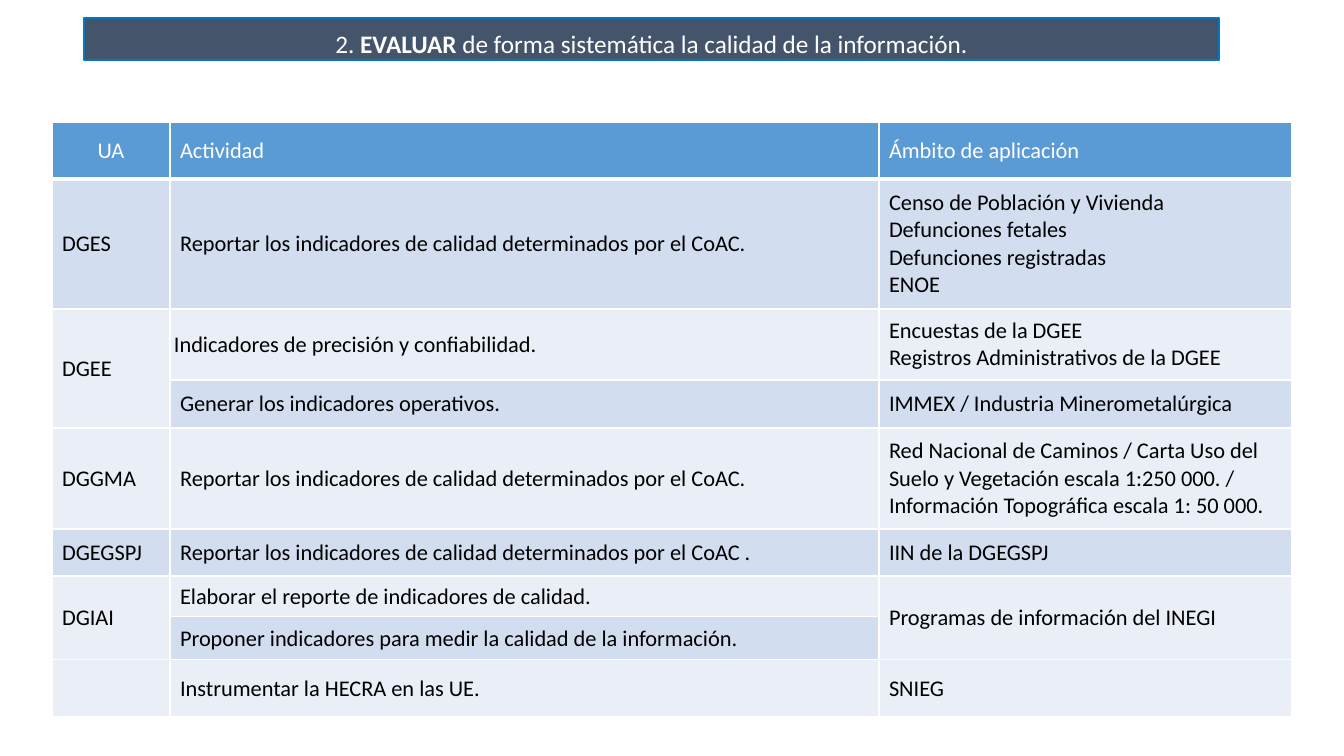
from dataclasses import dataclass

from lxml.etree import SubElement
from pptx import Presentation
from pptx.dml.color import RGBColor
from pptx.enum.text import MSO_ANCHOR, MSO_AUTO_SIZE, PP_ALIGN
from pptx.oxml.ns import qn
from pptx.util import Pt

EMU_PER_INCH = 914400
PX_PER_INCH = 100.8


@dataclass(frozen=True)
class Theme:
    font: str = "Calibri"
    title_size: int = 18
    table_size: int = 16
    banner: str = "44546A"
    banner_line: str = "0079BF"
    header: str = "5B9BD5"
    bands: tuple = ("EAEFF7", "D2DEEF")
    light: str = "FFFFFF"
    dark: str = "000000"


THEME = Theme()

TITLE_RUNS = (
    ("2. ", False),
    ("EVALUAR", True),
    (" de forma sistemática la calidad de la información.", False),
)
COLUMN_WIDTHS = (118, 709, 413)
# Row height, then the cells; None continues the cell above.
ROWS = (
    (57, "UA", "Actividad", "Ámbito de aplicación"),
    (130, "DGES", "Reportar los indicadores de calidad determinados por el CoAC.",
     "Censo de Población y Vivienda\nDefunciones fetales\nDefunciones registradas\nENOE"),
    (71, "DGEE", "Indicadores de precisión y confiabilidad.",
     "Encuestas de la DGEE\nRegistros Administrativos de la DGEE"),
    (48, None, "Generar los indicadores operativos.", "IMMEX / Industria Minerometalúrgica"),
    (101, "DGGMA", "Reportar los indicadores de calidad determinados por el CoAC.",
     "Red Nacional de Caminos / Carta Uso del Suelo y Vegetación escala 1:250 000. / "
     "Información Topográfica escala 1: 50 000."),
    (47, "DGEGSPJ", "Reportar los indicadores de calidad determinados por el CoAC .",
     "IIN de la DGEGSPJ"),
    (41, "DGIAI", "Elaborar el reporte de indicadores de calidad.",
     "Programas de información del INEGI"),
    (43, None, "Proponer indicadores para medir la calidad de la información.", None),
    (57, "", "Instrumentar la HECRA en las UE.", "SNIEG"),
)
PRECISION_CELL = (2, 1)


def px(length):
    return round(length * EMU_PER_INCH / PX_PER_INCH)


def rgb(value):
    return RGBColor.from_string(value)


def style_font(font, size, color, bold=False):
    font.name = THEME.font
    font.size = Pt(size)
    font.bold = bold
    font.color.rgb = rgb(color)


def add_banner(slide, left, top, width, height):
    title = slide.shapes.title
    title.left, title.top, title.width, title.height = map(px, (left, top, width, height))
    title.fill.solid()
    title.fill.fore_color.rgb = rgb(THEME.banner)
    title.line.color.rgb = rgb(THEME.banner_line)
    title.line.width = Pt(1)
    frame = title.text_frame
    frame.word_wrap = True
    frame.auto_size = MSO_AUTO_SIZE.NONE
    frame.vertical_anchor = MSO_ANCHOR.MIDDLE
    frame.margin_top, frame.margin_bottom = px(8), px(2)
    paragraph = frame.paragraphs[0]
    paragraph.alignment = PP_ALIGN.CENTER
    paragraph.line_spacing = 1.07
    for text, bold in TITLE_RUNS:
        run = paragraph.add_run()
        run.text = text
        style_font(run.font, THEME.title_size, THEME.light, bold)


def set_borders(cell, bottom_points):
    properties = cell._tc.get_or_add_tcPr()
    for side, points in (("L", 1), ("R", 1), ("T", 1), ("B", bottom_points)):
        line = SubElement(properties, qn(f"a:ln{side}"), w=str(Pt(points)))
        fill = SubElement(line, qn("a:solidFill"))
        SubElement(fill, qn("a:srgbClr"), val=THEME.light)


def fill_cell(cell, text, is_header, background):
    set_borders(cell, 3 if is_header else 1)
    cell.fill.solid()
    cell.fill.fore_color.rgb = rgb(background)
    cell.vertical_anchor = MSO_ANCHOR.MIDDLE
    cell.text_frame.text = text or ""
    for paragraph in cell.text_frame.paragraphs:
        style_font(paragraph.font, THEME.table_size, THEME.light if is_header else THEME.dark)
        for run in paragraph.runs:
            style_font(run.font, THEME.table_size, THEME.light if is_header else THEME.dark)


def add_activity_table(slide, left, top, width, height):
    table = slide.shapes.add_table(
        len(ROWS), len(COLUMN_WIDTHS), px(left), px(top), px(width), px(height)
    ).table
    for column, column_width in zip(table.columns, COLUMN_WIDTHS):
        column.width = px(column_width)
    for row_index, (row_height, *texts) in enumerate(ROWS):
        table.rows[row_index].height = px(row_height)
        is_header = row_index == 0
        background = THEME.header if is_header else THEME.bands[row_index % 2]
        for column_index, text in enumerate(texts):
            cell = table.cell(row_index, column_index)
            fill_cell(cell, text, is_header, background)
            if text is None:
                table.cell(row_index - 1, column_index).merge(cell)
    table.cell(0, 0).text_frame.paragraphs[0].alignment = PP_ALIGN.CENTER
    precision = table.cell(*PRECISION_CELL)
    precision.margin_left, precision.margin_right = px(4), px(7)
    precision.margin_top = precision.margin_bottom = 0
    precision.text_frame.paragraphs[0].alignment = PP_ALIGN.JUSTIFY


def main():
    presentation = Presentation()
    presentation.slide_width, presentation.slide_height = px(1344), px(756)
    title_only = presentation.slide_layouts[5]
    slide = presentation.slides.add_slide(title_only)
    add_banner(slide, 84, 18, 1135, 42)
    add_activity_table(slide, 52, 122, sum(COLUMN_WIDTHS), sum(row[0] for row in ROWS))
    presentation.save("out.pptx")


if __name__ == "__main__":
    main()
